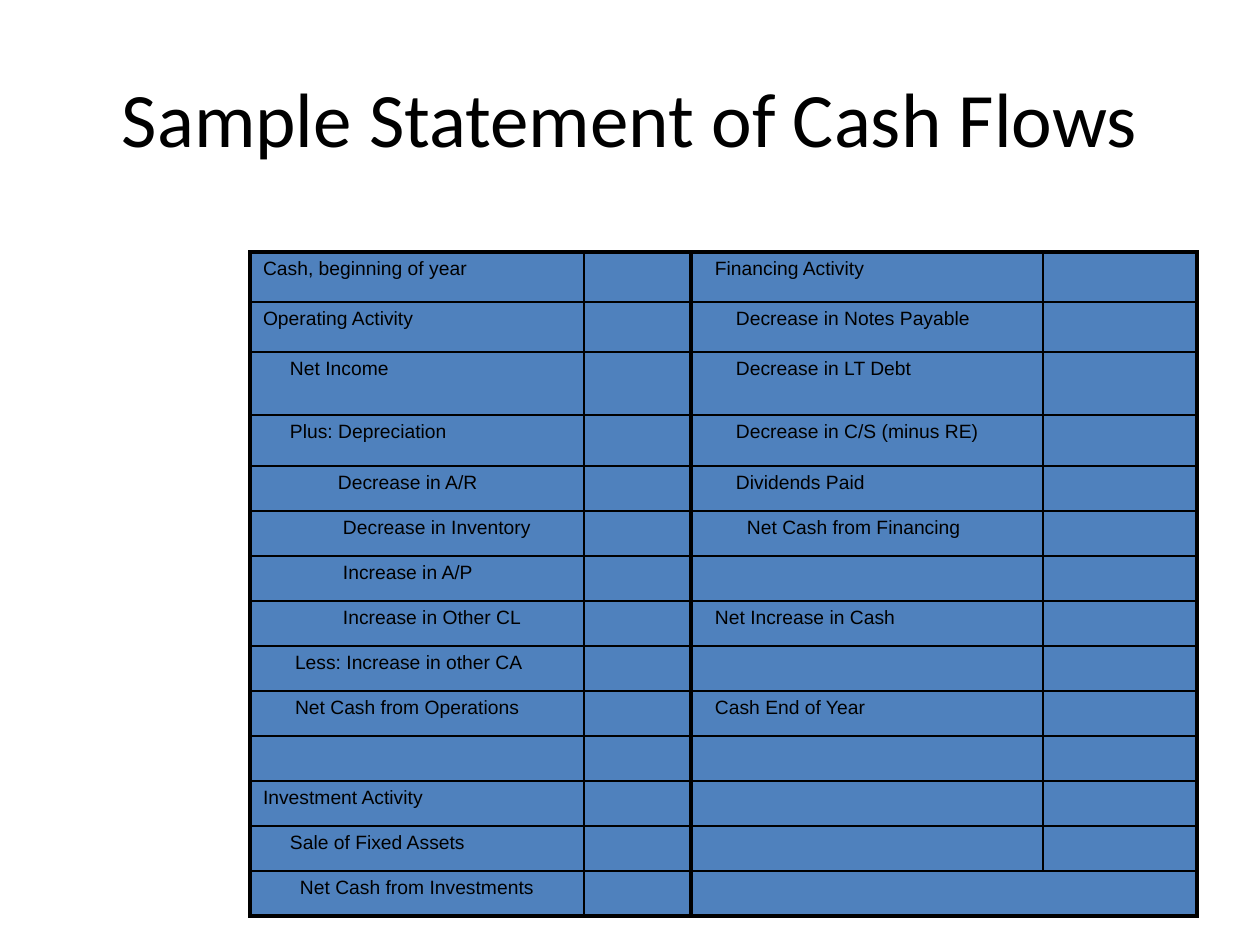
from pptx import Presentation
from pptx.dml.color import RGBColor
from pptx.enum.text import MSO_ANCHOR, PP_ALIGN
from pptx.oxml.ns import qn
from pptx.util import Emu, Pt
from lxml.etree import SubElement

COLORS = {"text": "000000", "border": "000000", "cell": "4F81BD"}
PX_PER_INCH = 126
THIN, THICK = 1, 2.25

COLUMN_WIDTHS = [334, 107, 352, 154]
ROW_HEIGHTS = [50, 50, 63, 51] + [45] * 10
CELL_INSET, CELL_PADDING = 13, 6

# Each entry is (indent in px, wording), from the top row down.
OPERATIONS_AND_INVESTMENTS = [
    (0, "Cash, beginning of year"),
    (0, "Operating Activity"),
    (27, "Net Income"),
    (27, "Plus: Depreciation"),
    (75, "Decrease in A/R"),
    (80, "Decrease in Inventory"),
    (80, "Increase in A/P"),
    (80, "Increase in Other CL"),
    (32, "Less: Increase in other CA"),
    (32, "Net Cash from Operations"),
    (0, ""),
    (0, "Investment Activity"),
    (27, "Sale of Fixed Assets"),
    (37, "Net Cash from Investments"),
]
FINANCING_AND_TOTALS = [
    (11, "Financing Activity"),
    (32, "Decrease in Notes Payable"),
    (32, "Decrease in LT Debt"),
    (32, "Decrease in C/S (minus RE)"),
    (32, "Dividends Paid"),
    (43, "Net Cash from Financing"),
    (0, ""),
    (11, "Net Increase in Cash"),
    (0, ""),
    (11, "Cash End of Year"),
]


def px(length):
    return Emu(round(length * 914400 / PX_PER_INCH))


def set_font(paragraph, name, size):
    paragraph.font.name = name
    paragraph.font.size = Pt(size)
    paragraph.font.color.rgb = RGBColor.from_string(COLORS["text"])


def set_borders(cell, widths):
    """Draw left, right, top and bottom borders with the given point widths."""
    properties = cell._tc.get_or_add_tcPr()
    for position, (side, width) in enumerate(zip("LRTB", widths)):
        border = SubElement(properties, qn(f"a:ln{side}"), w=str(Pt(width)))
        fill = SubElement(border, qn("a:solidFill"))
        SubElement(fill, qn("a:srgbClr"), val=COLORS["border"])
        properties.insert(position, border)


def format_cell(cell, indent, wording):
    cell.fill.solid()
    cell.fill.fore_color.rgb = RGBColor.from_string(COLORS["cell"])
    cell.margin_left = px(CELL_INSET + indent)
    cell.margin_right = px(CELL_INSET)
    cell.margin_top = cell.margin_bottom = px(CELL_PADDING)
    entry = cell.text_frame.paragraphs[0]
    set_font(entry, "Arial", 11)
    entry.space_before = Pt(2.2)
    if wording:
        entry.text = wording
    else:
        # An empty paragraph takes its line height from its end mark.
        SubElement(entry._p, qn("a:endParaRPr"), sz="1100")


def add_title(slide, left, top, width, height):
    title = slide.shapes.title
    title.left, title.top = px(left), px(top)
    title.width, title.height = px(width), px(height)
    title.text_frame.text = "Sample Statement of Cash Flows"
    title.text_frame.vertical_anchor = MSO_ANCHOR.MIDDLE
    heading = title.text_frame.paragraphs[0]
    heading.alignment = PP_ALIGN.CENTER
    set_font(heading, "Calibri", 44)


def add_cash_flow_table(slide, left, top):
    row_count, column_count = len(ROW_HEIGHTS), len(COLUMN_WIDTHS)
    statement = slide.shapes.add_table(
        row_count, column_count, px(left), px(top),
        px(sum(COLUMN_WIDTHS)), px(sum(ROW_HEIGHTS))).table
    statement.first_row = statement.horz_banding = False
    for column, width in zip(statement.columns, COLUMN_WIDTHS):
        column.width = px(width)
    for row, height in zip(statement.rows, ROW_HEIGHTS):
        row.height = px(height)

    entries = {0: OPERATIONS_AND_INVESTMENTS, 2: FINANCING_AND_TOTALS}
    last_row = row_count - 1
    for r in range(row_count):
        for c in range(column_count):
            cell = statement.cell(r, c)
            column_entries = entries.get(c, [])
            indent, wording = column_entries[r] if r < len(column_entries) else (0, "")
            format_cell(cell, indent, wording)
            # Each label and amount pair is framed by thick outer lines.
            is_label = c % 2 == 0
            spans_pair = r == last_row and c >= 2
            set_borders(cell, [
                THICK if is_label else THIN,
                THICK if not is_label or spans_pair else THIN,
                THICK if r == 0 else THIN,
                THICK if r == last_row else THIN,
            ])
    statement.cell(last_row, 2).merge(statement.cell(last_row, 3))


def main():
    presentation = Presentation()
    presentation.slide_width, presentation.slide_height = px(1260), px(945)
    slide = presentation.slides.add_slide(presentation.slide_layouts[5])
    add_title(slide, 63, 38, 1134, 158)
    add_cash_flow_table(slide, 250, 252)
    presentation.save("out.pptx")


if __name__ == "__main__":
    main()
